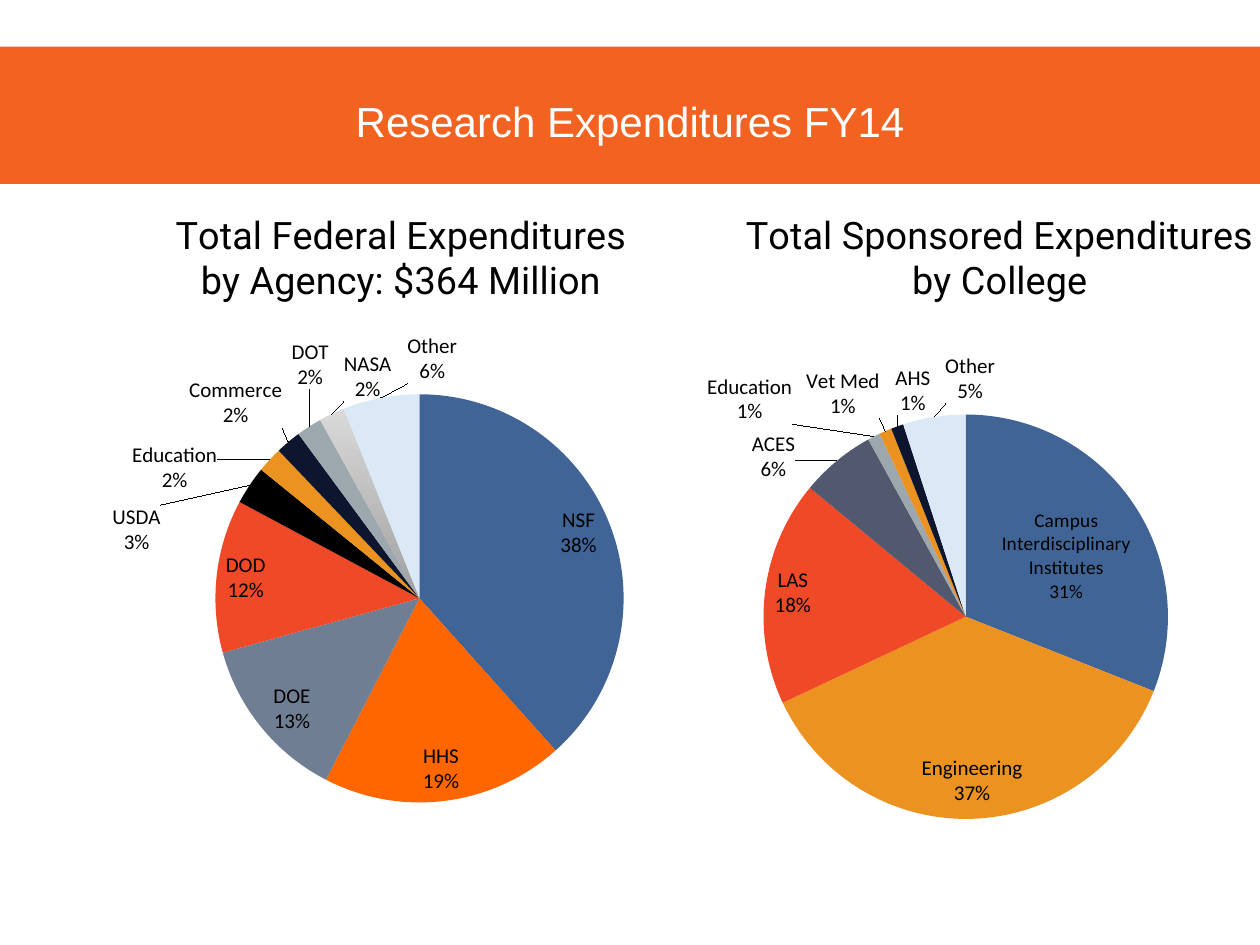
import pptx
import pptx.chart.data
import pptx.dml.color
import pptx.enum.chart
import pptx.enum.shapes
import pptx.enum.text
import pptx.oxml
import pptx.oxml.ns
import pptx.util
from pptx.util import Inches

CHART_W, CHART_H = 5.66, 5.05
NS = 'xmlns:c="http://schemas.openxmlformats.org/drawingml/2006/chart"'
LABEL_PARTS = """<c:dLblPos val="bestFit"/><c:showLegendKey val="0"/><c:showVal val="0"/>
<c:showCatName val="1"/><c:showSerName val="0"/><c:showPercent val="1"/>
<c:showBubbleSize val="0"/><c:separator>\n</c:separator>"""

# Category, value, fill (two colours make a gradient), label shift as chart fractions
AGENCIES = [
    ("NSF", 38, "406496", None),
    ("HHS", 19, "FF6600", None),
    ("DOE", 13, "707E94", None),
    ("DOD", 12, "EF4927", None),
    ("USDA", 3, "000000", (-0.116, 0.116)),
    ("Education", 2, "EB9221", (-0.066, 0.06)),
    ("Commerce", 2, "0E162F", (-0.002, -0.013)),
    ("DOT", 2, "9DA7AE", (0.033, -0.049)),
    ("NASA", 2, ("D9D9D9", "A0A0A0"), (0.088, -0.009)),
    ("Other", 6, "DAE9F5", (0.109, -0.011)),
]
COLLEGES = [
    ("Campus Interdisciplinary Institutes", 31, "406496", None),
    ("Engineering", 37, "EB9221", None),
    ("LAS", 18, "EF4927", None),
    ("ACES", 6, "52586E", (-0.052, 0.042)),
    ("Education", 1, "9DA7AE", (-0.11, -0.009)),
    ("Vet Med", 1, "EB9221", (-0.004, -0.009)),
    ("AHS", 1, "0E162F", (0.05, -0.006)),
    ("Other", 5, "DAE9F5", (0.087, -0.009)),
]


def rgb(value):
    return pptx.dml.color.RGBColor.from_string(value)


def style_font(font, name, size, color="000000"):
    font.name, font.size, font.bold = name, pptx.util.Pt(size), False
    font.color.rgb = rgb(color)


def set_layout(parent, index, parts):
    """Give a chart part a manual layout, as its child at the given index."""
    for old in parent.findall(pptx.oxml.ns.qn("c:layout")):
        parent.remove(old)
    body = "".join(f'<c:{tag} val="{val}"/>' for tag, val in parts.items())
    parent.insert(index, pptx.oxml.parse_xml(
        f"<c:layout {NS}><c:manualLayout>{body}</c:manualLayout></c:layout>"))


def color_slice(fill, color):
    if isinstance(color, str):
        fill.solid()
        fill.fore_color.rgb = rgb(color)
        return
    fill.gradient()
    fill.gradient_angle = 270
    for stop, value in zip(fill.gradient_stops, color):
        stop.color.rgb = rgb(value)


def text_props(size):
    return f"""<c:txPr><a:bodyPr xmlns:a="http://schemas.openxmlformats.org/drawingml/2006/main"/>
<a:p xmlns:a="http://schemas.openxmlformats.org/drawingml/2006/main"><a:pPr><a:defRPr sz="{size * 100}" b="0">
<a:solidFill><a:srgbClr val="000000"/></a:solidFill><a:latin typeface="Calibri"/></a:defRPr></a:pPr>
<a:endParaRPr lang="en-US"/></a:p></c:txPr>"""


def add_labels(series, rows):
    """Label each slice with category and percent, shifting the outer labels."""
    labels = ""
    for i, (name, _, _, shift) in enumerate(rows):
        size = 11 if len(name) > 20 else 12
        layout = ""
        if shift:
            layout = (f'<c:layout><c:manualLayout><c:x val="{shift[0]}"/>'
                      f'<c:y val="{shift[1]}"/></c:manualLayout></c:layout>')
        labels += (f'<c:dLbl><c:idx val="{i}"/>{layout}<c:numFmt formatCode="0%" sourceLinked="0"/>'
                   f"{text_props(size)}{LABEL_PARTS}</c:dLbl>")
    xml = (f'<c:dLbls {NS}>{labels}<c:numFmt formatCode="0%" sourceLinked="0"/>'
           f'{text_props(12)}{LABEL_PARTS}<c:showLeaderLines val="1"/></c:dLbls>')
    series._element.find(pptx.oxml.ns.qn("c:cat")).addprevious(pptx.oxml.parse_xml(xml))


def add_pie(s, x, y, title, title_x, rows, pie):
    """Add a titled pie; pie is its left, top and diameter within the chart box."""
    data = pptx.chart.data.CategoryChartData()
    data.categories = [row[0] for row in rows]
    data.add_series("Series 1", [row[1] for row in rows])
    chart = s.shapes.add_chart(pptx.enum.chart.XL_CHART_TYPE.PIE, Inches(x), Inches(y),
                               Inches(CHART_W), Inches(CHART_H), data).chart
    style_font(chart.font, "Calibri", 18)
    chart.has_legend = False
    chart.has_title = True
    tf = chart.chart_title.text_frame
    tf.text = title
    for p in tf.paragraphs:
        p.alignment = pptx.enum.text.PP_ALIGN.CENTER
        style_font(p.runs[0].font, "Roboto", 21.6)
    set_layout(chart.chart_title._element, 1,
               {"xMode": "edge", "yMode": "edge", "x": title_x, "y": 0.012})
    left, top, size = pie
    set_layout(chart._chartSpace.chart.plotArea, 0, {
        "layoutTarget": "inner", "xMode": "edge", "yMode": "edge",
        "x": left / CHART_W, "y": top / CHART_H, "w": size / CHART_W, "h": size / CHART_H})
    plot = chart.plots[0]
    plot.vary_by_categories = True
    series = plot.series[0]
    for i, row in enumerate(rows):
        color_slice(series.points[i].format.fill, row[2])
    add_labels(series, rows)


def add_header(s, y, height, text):
    """Add the full-width band and the slide title over it."""
    band = s.shapes.add_shape(pptx.enum.shapes.MSO_SHAPE.RECTANGLE,
                              0, Inches(y), Inches(10), Inches(height))
    band.shadow.inherit = False
    band.fill.solid()
    band.fill.fore_color.rgb = rgb("F26322")
    band.line.fill.background()
    title = s.shapes.title
    band._element.getparent().insert(2, band._element)
    title.left, title.top = 0, Inches(y + 0.31)
    title.width, title.height = Inches(10), Inches(0.63)
    tf = title.text_frame
    tf.text = text
    tf.vertical_anchor = pptx.enum.text.MSO_ANCHOR.MIDDLE
    tf.margin_bottom = Inches(0.13)
    p = tf.paragraphs[0]
    p.alignment = pptx.enum.text.PP_ALIGN.CENTER
    style_font(p.runs[0].font, "Arial", 24, "FFFFFF")


def main():
    prs = pptx.Presentation()
    prs.slide_width, prs.slide_height = Inches(10), Inches(7.5)
    s = prs.slides.add_slide(prs.slide_layouts[5])
    add_header(s, 0.37, 1.09, "Research Expenditures FY14")
    add_pie(s, 0.26, 1.59, "Total Federal Expenditures\nby Agency: $364 Million", 0.195,
            AGENCIES, (1.45, 1.54, 3.24))
    add_pie(s, 5, 1.59, "Total Sponsored Expenditures\nby College", 0.157,
            COLLEGES, (1.06, 1.7, 3.21))
    prs.save("out.pptx")


if __name__ == "__main__":
    main()
